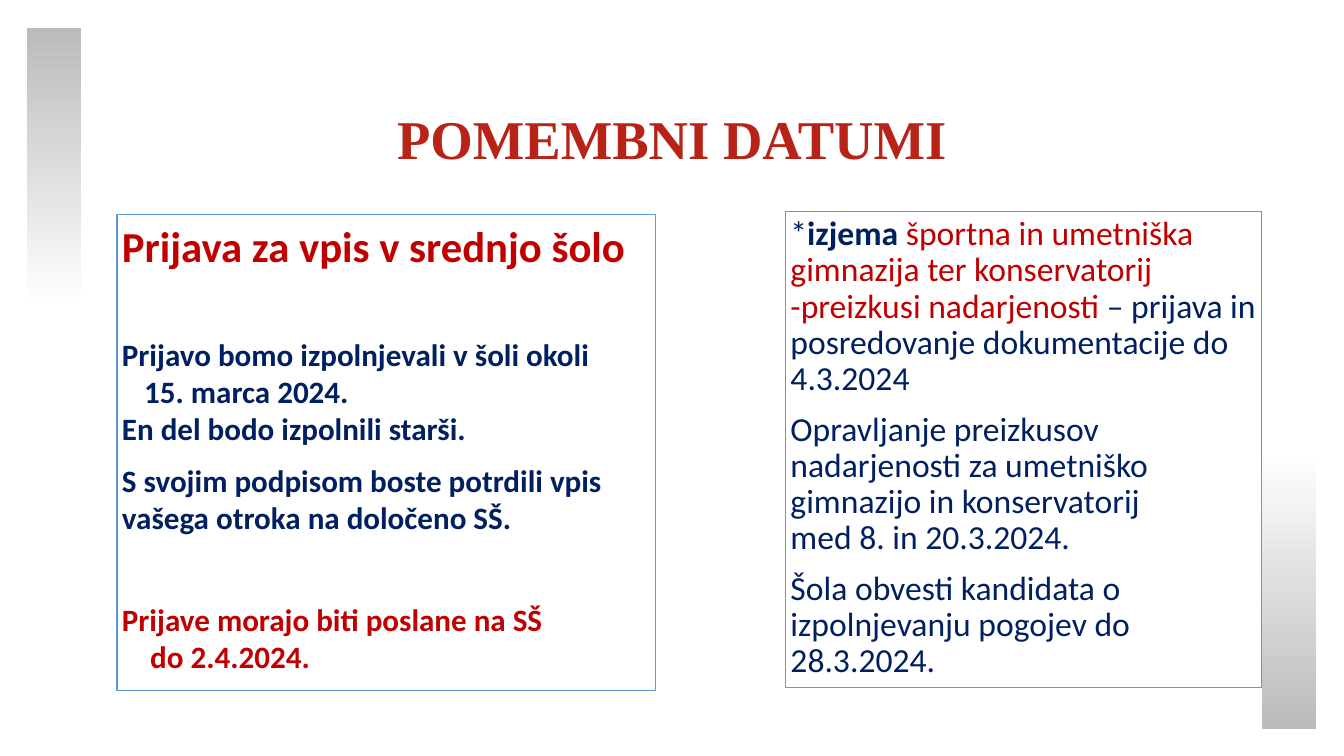
"""Build the slide with important dates for secondary school enrolment."""
from pptx import Presentation
from pptx.dml.color import RGBColor
from pptx.enum.shapes import MSO_SHAPE
from pptx.enum.text import MSO_ANCHOR, PP_ALIGN
from pptx.util import Pt

PX = 9144
RECTANGLE = MSO_SHAPE.RECTANGLE
TOP, MIDDLE = MSO_ANCHOR.TOP, MSO_ANCHOR.MIDDLE
LEFT, CENTER = PP_ALIGN.LEFT, PP_ALIGN.CENTER
COLORS = {
    "title": "B72417",
    "red": "C00000",
    "navy": "002060",
    "border": "5B9BD5",
    "white": "FFFFFF",
    "gray": "BBBBBB",
}


def add_box(left, top, width, height, line_color, line_width):
    box = slide.shapes.add_shape(
        RECTANGLE, left * PX, top * PX, width * PX, height * PX)
    box.shadow.inherit = False
    box.fill.background()
    if line_color:
        box.line.color.rgb = RGBColor.from_string(COLORS[line_color])
        box.line.width = Pt(line_width)
    else:
        box.line.fill.background()
    return box


def write_paragraphs(box, paragraphs, anchor, align, line_spacing, font_name):
    frame = box.text_frame
    frame.word_wrap = True
    frame.vertical_anchor = anchor
    frame.margin_left = frame.margin_right = 5 * PX
    frame.margin_top = frame.margin_bottom = 5 * PX
    for index, (space_before, indent, size, runs) in enumerate(paragraphs):
        paragraph = frame.add_paragraph() if index else frame.paragraphs[0]
        paragraph.alignment = align
        paragraph.line_spacing = line_spacing
        paragraph.space_before = Pt(space_before)
        if indent:
            paragraph._p.get_or_add_pPr().set("marL", str(indent * PX))
        for text, color, bold in runs:
            if text == "\n":
                paragraph.add_line_break()
                continue
            run = paragraph.add_run()
            run.text = text
            run.font.name = font_name
            run.font.size = Pt(size)
            run.font.bold = bold
            run.font.color.rgb = RGBColor.from_string(COLORS[color])


presentation = Presentation()
presentation.slide_width = 1333 * PX
presentation.slide_height = 750 * PX
slide = presentation.slides.add_slide(presentation.slide_layouts[6])

title = add_box(255, 68, 823, 145, None, 0)
write_paragraphs(
    title, [(0, 0, 39, [("POMEMBNI DATUMI", "title", True)])],
    MIDDLE, CENTER, 0.9, "Times New Roman")

enrolment = add_box(116, 213, 534, 472, "border", 1)
enrolment_lines = [
    (10, 0, 30.5, "Prijava za vpis v srednjo šolo", "red"),
    (46, 0, 22.2, "Prijavo bomo izpolnjevali v šoli okoli", "navy"),
    (0, 22, 22.2, "15. marca 2024.", "navy"),
    (0, 0, 22.2, "En del bodo izpolnili starši.", "navy"),
    (10, 0, 22.2, "S svojim podpisom boste potrdili vpis vašega otroka "
                  "na določeno SŠ.", "navy"),
    (46, 0, 22.2, "Prijave morajo biti poslane na SŠ", "red"),
    (0, 28, 22.2, "do 2.4.2024.", "red"),
]
write_paragraphs(
    enrolment,
    [(before, indent, size, [(text, color, True)])
     for before, indent, size, text, color in enrolment_lines],
    TOP, LEFT, 1.0, "Calibri")

for left, top, start, end in [(1251, 446, "white", "gray"),
                              (26, 27, "gray", "white")]:
    side_bar = add_box(left, top, 55, 278, "white", 1.5)
    side_bar.fill.gradient()
    side_bar.fill.gradient_angle = 270
    for stop, color, position in zip(
            side_bar.fill.gradient_stops, (start, end), (0, 1)):
        stop.color.rgb = RGBColor.from_string(COLORS[color])
        stop.position = position

exceptions = add_box(779, 210, 472, 472, "border", 1)
exception_runs = [
    [("*", "navy", False),
     ("izjema ", "navy", True),
     ("športna in umetniška gimnazija ter konservatorij "
      "-preizkusi nadarjenosti ", "red", False),
     ("– prijava in posredovanje dokumentacije do 4.3.2024", "navy", False)],
    [("Opravljanje preizkusov nadarjenosti za umetniško gimnazijo "
      "in konservatorij", "navy", False),
     ("\n", "navy", False),
     ("med 8. in 20.3.2024.", "navy", False)],
    [("Šola obvesti kandidata o izpolnjevanju pogojev do 28.3.2024.",
      "navy", False)],
]
write_paragraphs(
    exceptions, [(10, 0, 24, runs) for runs in exception_runs],
    TOP, LEFT, 0.9, "Calibri")

presentation.save("out.pptx")
